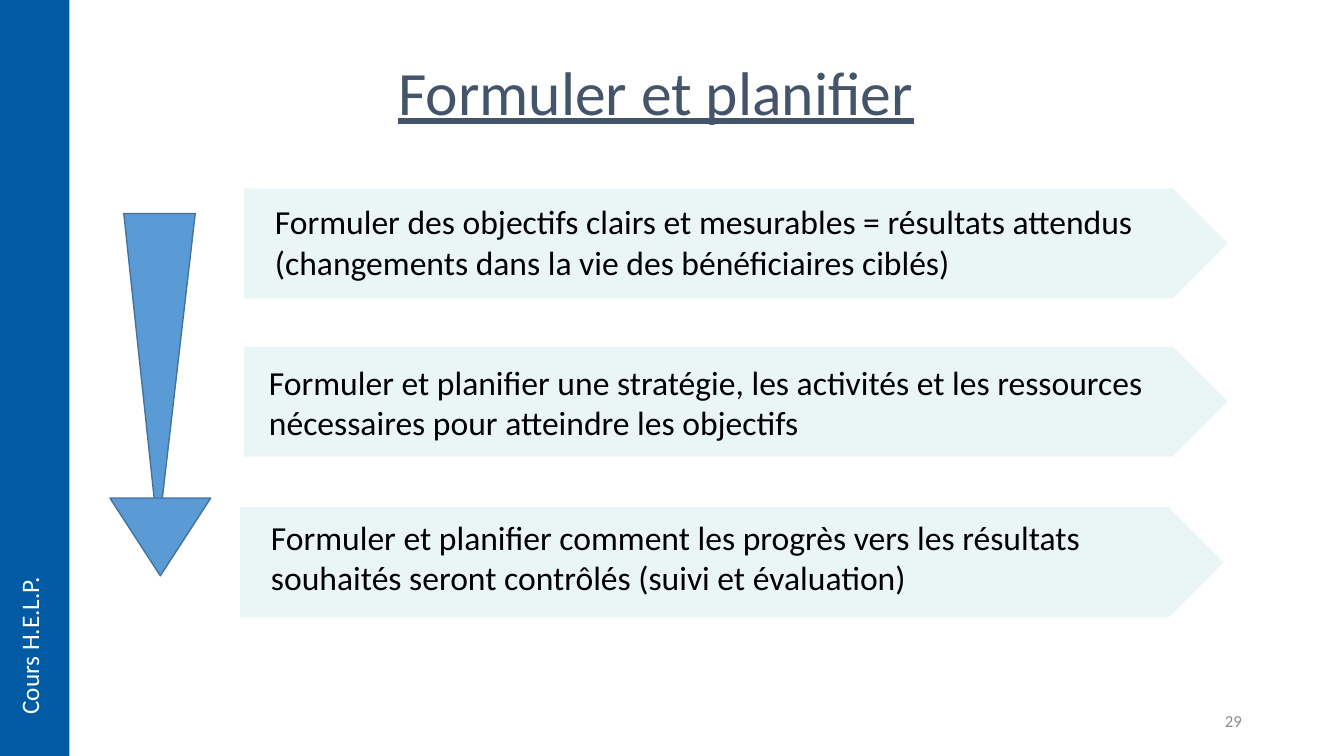
from dataclasses import dataclass

from pptx import Presentation
from pptx.dml.color import RGBColor
from pptx.enum.shapes import MSO_SHAPE as Preset
from pptx.enum.text import MSO_ANCHOR as Anchor, MSO_AUTO_SIZE as AutoSize, PP_ALIGN as Align
from pptx.shapes.autoshape import Shape
from pptx.slide import Slide
from pptx.util import Cm, Pt

FONT = "Calibri"
SLIDE_WIDTH, SLIDE_HEIGHT = 33.87, 19.05
ARROW_BLUE, ARROW_EDGE = "5B9BD5", "43739E"
STEP_FILL, SIDEBAR_BLUE = "EAF5F6", "005BA4"
STEP_WIDTH, STEP_HEIGHT = 24.79, 2.77


@dataclass(frozen=True)
class Box:
    """Place and size in centimetres."""
    left: float
    top: float
    width: float
    height: float

    def lengths(self) -> tuple[Cm, Cm, Cm, Cm]:
        return Cm(self.left), Cm(self.top), Cm(self.width), Cm(self.height)


@dataclass(frozen=True)
class Step:
    left: float
    top: float
    text_box: Box
    text: str


STEPS = (
    Step(6.15, 4.75, Box(6.68, 4.95, 22.66, 3.07),
         "Formuler des objectifs clairs et mesurables = résultats attendus "
         "(changements dans la vie des bénéficiaires ciblés)"),
    Step(6.15, 8.74, Box(6.53, 8.99, 22.66, 3.33),
         "Formuler et planifier une stratégie, les activités et les ressources "
         "nécessaires pour atteindre les objectifs"),
    Step(6.05, 12.78, Box(6.58, 12.9, 23.11, 2.31),
         "Formuler et planifier comment les progrès vers les résultats "
         "souhaités seront contrôlés (suivi et évaluation)"),
)


def color(hex_code: str) -> RGBColor:
    return RGBColor.from_string(hex_code)


def add_block(slide: Slide, preset: Preset, box: Box, fill: str, edge: str | None = None,
              adjustment: float | None = None, rotation: float = 0) -> Shape:
    block = slide.shapes.add_shape(preset, *box.lengths())
    block.shadow.inherit = False
    block.rotation = rotation
    block.fill.solid()
    block.fill.fore_color.rgb = color(fill)
    if edge:
        block.line.color.rgb = color(edge)
        block.line.width = Pt(1)
    else:
        block.line.fill.background()
    if adjustment is not None:
        block.adjustments[0] = adjustment
    return block


def add_text(slide: Slide, box: Box, text: str, size: float, text_color: str,
             align: Align = Align.LEFT, anchor: Anchor = Anchor.TOP, grow: bool = False,
             underline: bool = False) -> Shape:
    label = slide.shapes.add_textbox(*box.lengths())
    frame = label.text_frame
    frame.word_wrap = True
    frame.vertical_anchor = anchor
    frame.auto_size = AutoSize.SHAPE_TO_FIT_TEXT if grow else AutoSize.NONE
    paragraph = frame.paragraphs[0]
    paragraph.alignment = align
    run = paragraph.add_run()
    run.text = text
    run.font.name = FONT
    run.font.size = Pt(size)
    run.font.color.rgb = color(text_color)
    if underline:
        run.font.underline = True
    return label


def add_down_arrow(slide: Slide) -> None:
    add_block(slide, Preset.ISOSCELES_TRIANGLE, Box(3.12, 5.38, 1.8, 8.1),
              ARROW_BLUE, ARROW_EDGE, adjustment=0.52, rotation=180)
    add_block(slide, Preset.ISOSCELES_TRIANGLE, Box(2.77, 12.55, 2.54, 1.96),
              ARROW_BLUE, ARROW_EDGE, rotation=180)


def add_step(slide: Slide, step: Step) -> None:
    add_block(slide, Preset.PENTAGON, Box(step.left, step.top, STEP_WIDTH, STEP_HEIGHT),
              STEP_FILL, adjustment=0.5)
    add_text(slide, step.text_box, step.text, 24, "000000", grow=True)


def add_sidebar(slide: Slide) -> None:
    add_block(slide, Preset.RECTANGLE, Box(0, 0, 1.75, SLIDE_HEIGHT), SIDEBAR_BLUE)
    course = add_text(slide, Box(0.23, 14.25, 1.27, 4.01), "Cours H.E.L.P.", 18, "FFFFFF",
                      grow=True)
    course.text_frame.word_wrap = False
    course.element.txBody.bodyPr.set("vert", "vert270")


def main() -> None:
    deck = Presentation()
    deck.slide_width, deck.slide_height = Cm(SLIDE_WIDTH), Cm(SLIDE_HEIGHT)
    slide = deck.slides.add_slide(deck.slide_layouts[6])

    title = add_text(slide, Box(5.74, 0.81, 21.59, 3.18), "Formuler et planifier", 44, "44546A",
                     Align.CENTER, Anchor.MIDDLE, underline=True)
    title.text_frame.paragraphs[0].line_spacing = 0.9
    add_down_arrow(slide)
    for step in STEPS:
        add_step(slide, step)
    add_sidebar(slide)
    add_text(slide, Box(23.93, 17.65, 7.62, 1.02), "29", 12, "8C8C8C",
             Align.RIGHT, Anchor.MIDDLE)

    deck.save("out.pptx")


if __name__ == "__main__":
    main()
